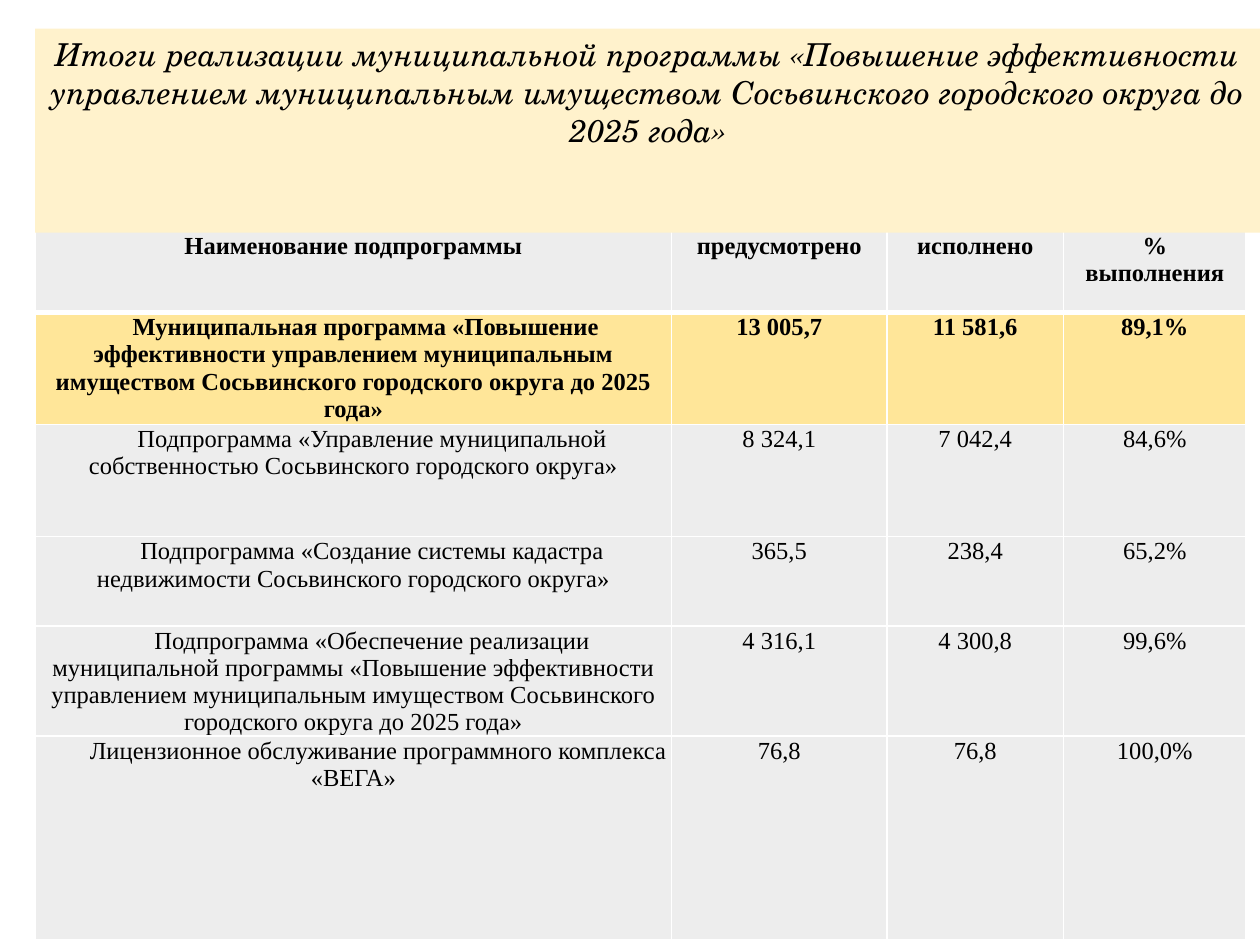
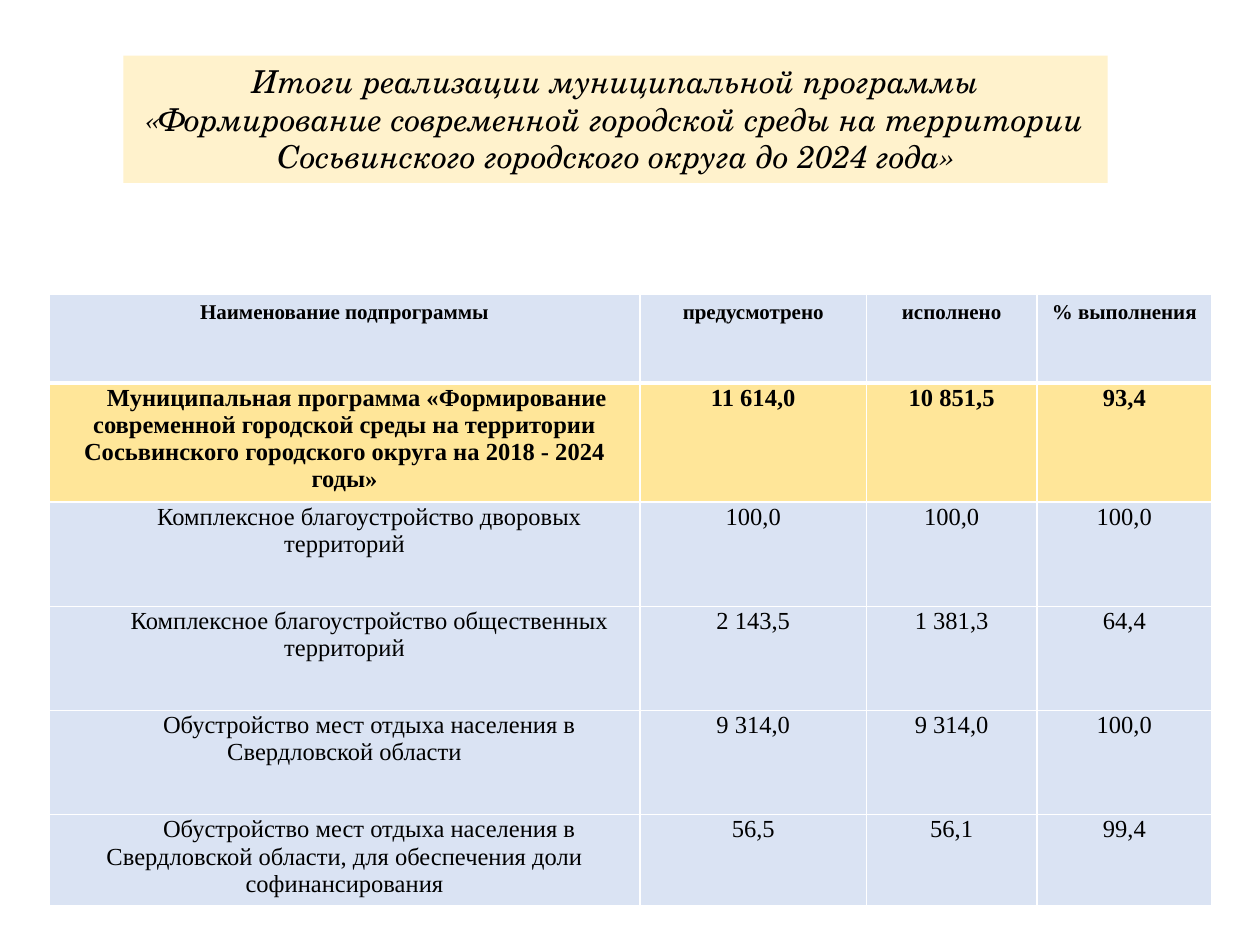
from lxml.etree import SubElement
from pptx import Presentation
from pptx.dml.color import RGBColor
from pptx.enum.text import PP_ALIGN
from pptx.oxml.ns import qn
from pptx.util import Cm, Pt

BLACK, WHITE = "000000", "FFFFFF"
TITLE_FILL, TOTAL_FILL = "FFF2CC", "FFE699"
GREY, BLUE = "EDEDED", "DAE3F3"
TITLE_FONT, TABLE_FONT = "TeX Gyre Schola", "Times New Roman"
HEADINGS = ("Наименование подпрограммы", "предусмотрено", "исполнено", "% выполнения")
THIN, THICK = 1, 3


def color(hex_string):
    return RGBColor.from_string(hex_string)


def write(text_frame, text, font=TABLE_FONT, size=14, bold=False, italic=False, indent=0):
    """Put centred text in the frame; indent shifts the first line, in cm."""
    text_frame.word_wrap = True
    paragraph = text_frame.paragraphs[0]
    paragraph.alignment = PP_ALIGN.CENTER
    if indent:
        paragraph._p.get_or_add_pPr().set("indent", str(Cm(indent)))
    run = paragraph.add_run()
    run.text = text
    run.font.name = font
    run.font.size = Pt(size)
    run.font.bold = bold
    run.font.italic = italic
    run.font.color.rgb = color(BLACK)


def set_borders(cell, top, bottom):
    properties = cell._tc.get_or_add_tcPr()
    for side, width in (("L", THIN), ("R", THIN), ("T", top), ("B", bottom)):
        line = SubElement(properties, qn(f"a:ln{side}"), w=str(Pt(width)))
        SubElement(SubElement(line, qn("a:solidFill")), qn("a:srgbClr"), val=WHITE)


def add_title(slide, box, text):
    title = slide.shapes.add_textbox(*map(Cm, box))
    title.fill.solid()
    title.fill.fore_color.rgb = color(TITLE_FILL)
    write(title.text_frame, text, font=TITLE_FONT, size=18, italic=True)


def add_results_table(slide, origin, widths, heights, rows, indents, fill, heading_size):
    """Row 0 holds the headings and row 1 the programme total."""
    left, top = origin
    frame = slide.shapes.add_table(
        len(heights), len(widths), Cm(left), Cm(top), Cm(sum(widths)), Cm(sum(heights)))
    table = frame.table
    table.horz_banding = False
    for column, width in zip(table.columns, widths):
        column.width = Cm(width)
    for row_index, values in enumerate((HEADINGS, *rows)):
        table.rows[row_index].height = Cm(heights[row_index])
        is_heading, is_total = row_index == 0, row_index == 1
        for column_index, value in enumerate(values):
            cell = table.cell(row_index, column_index)
            set_borders(cell, THICK if is_total else THIN, THICK if is_heading else THIN)
            cell.fill.solid()
            cell.fill.fore_color.rgb = color(TOTAL_FILL if is_total else fill)
            if not is_heading:
                cell.margin_left = cell.margin_right = cell.margin_top = Cm(0.03)
                cell.margin_bottom = 0
            write(cell.text_frame, value,
                  size=heading_size if is_heading else 14,
                  bold=is_heading or is_total,
                  indent=0 if is_heading or column_index else indents[row_index - 1])


def add_property_slide(slide):
    rows = (
        ("Муниципальная программа «Повышение эффективности управлением муниципальным "
         "имуществом Сосьвинского городского округа до 2025 года»",
         "13 005,7", "11 581,6", "89,1%"),
        ("Подпрограмма «Управление муниципальной собственностью Сосьвинского "
         "городского округа»", "8 324,1", "7 042,4", "84,6%"),
        ("Подпрограмма «Создание системы кадастра недвижимости Сосьвинского "
         "городского округа»", "365,5", "238,4", "65,2%"),
        ("Подпрограмма «Обеспечение реализации муниципальной программы «Повышение "
         "эффективности управлением муниципальным имуществом Сосьвинского городского "
         "округа до 2025 года»", "4 316,1", "4 300,8", "99,6%"),
        ("Лицензионное обслуживание программного комплекса «ВЕГА»",
         "76,8", "76,8", "100,0%"),
    )
    add_results_table(slide, (0.71, 4.57), (12.83, 4.34, 3.56, 3.68),
                      (1.73, 2.26, 2.26, 1.8, 2.2, 4.11), rows,
                      indents=(0.5, 0.75, 0.75, 0.75, 1), fill=GREY, heading_size=14)
    add_title(slide, (0.71, 0.58, 24.69, 4.11),
              "Итоги реализации муниципальной программы «Повышение эффективности "
              "управлением муниципальным имуществом Сосьвинского городского округа "
              "до 2025 года»")


def add_urban_slide(slide):
    rows = (
        ("Муниципальная программа «Формирование современной городской среды на "
         "территории Сосьвинского городского округа на 2018 - 2024 годы»",
         "11 614,0", "10 851,5", "93,4"),
        ("Комплексное благоустройство дворовых территорий", "100,0", "100,0", "100,0"),
        ("Комплексное благоустройство общественных территорий",
         "2 143,5", "1 381,3", "64,4"),
        ("Обустройство мест отдыха населения в Свердловской области",
         "9 314,0", "9 314,0", "100,0"),
        ("Обустройство мест отдыха населения в Свердловской области, для обеспечения "
         "доли софинансирования", "56,5", "56,1", "99,4"),
    )
    add_results_table(slide, (0.99, 5.94), (11.91, 4.57, 3.43, 3.53),
                      (1.78, 2.36, 2.1, 2.1, 2.1, 1.83), rows,
                      indents=(0.5, 1, 1, 1, 1), fill=BLUE, heading_size=12)
    add_title(slide, (2.49, 1.12, 19.84, 2.57),
              "Итоги реализации муниципальной программы «Формирование современной "
              "городской среды на территории Сосьвинского городского округа до 2024 года»")


def main():
    presentation = Presentation()
    presentation.slide_width, presentation.slide_height = Cm(25.4), Cm(19.05)
    blank = presentation.slide_layouts[6]
    for fill_slide in (add_property_slide, add_urban_slide):
        fill_slide(presentation.slides.add_slide(blank))
    presentation.save("out.pptx")


if __name__ == "__main__":
    main()
